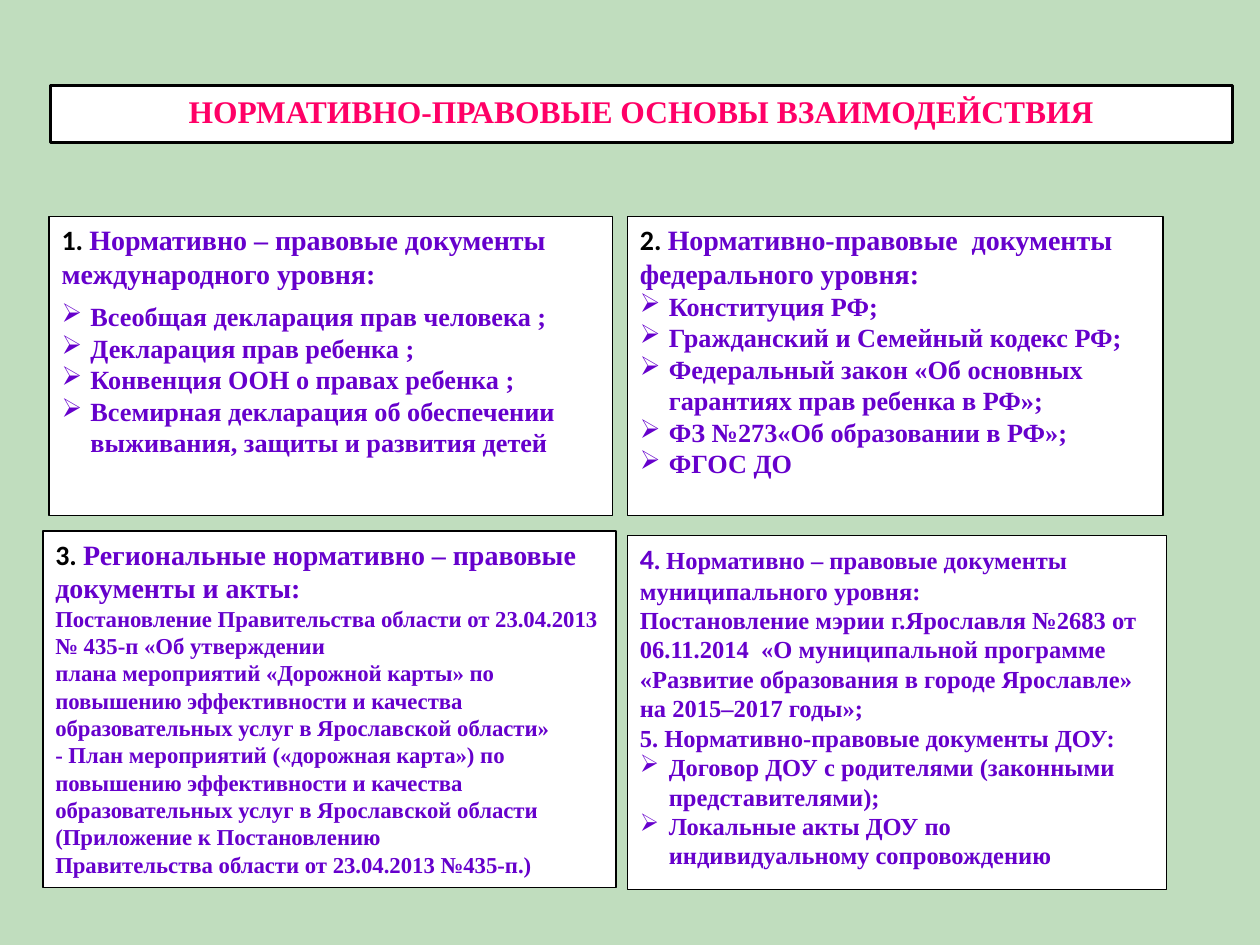
from lxml import etree
from pptx import Presentation
from pptx import util as u
from pptx.dml.color import RGBColor
from pptx.enum import shapes, text
from pptx.oxml.ns import qn

THEME = {
    "back": RGBColor.from_string("C0DDBE"),
    "panel": RGBColor.from_string("FFFFFF"),
    "ink": RGBColor.from_string("000000"),
    "title": RGBColor.from_string("FF0066"),
    "body": RGBColor.from_string("6600CC"),
    "serif": "Times New Roman",
    "sans": "Calibri",
    "title_size": 18,
    "heading_size": 16,
}
BULLET_INDENT = u.Inches(0.23)

deck = Presentation()
deck.slide_width, deck.slide_height = u.Inches(10), u.Inches(7.5)
slide = deck.slides.add_slide(deck.slide_layouts[6])
slide.background.fill.solid()
slide.background.fill.fore_color.rgb = THEME["back"]


def add_panel(left, top, width, height, border):
    """Bordered white box; lengths are percentages of the slide's size."""
    across, down = deck.slide_width / 100, deck.slide_height / 100
    panel = slide.shapes.add_shape(
        shapes.MSO_SHAPE.RECTANGLE, round(left * across), round(top * down),
        round(width * across), round(height * down))
    panel.shadow.inherit = False
    panel.fill.solid()
    panel.fill.fore_color.rgb = THEME["panel"]
    panel.line.color.rgb = THEME["ink"]
    panel.line.width = u.Pt(border)
    panel.text_frame.word_wrap = True
    panel.text_frame.vertical_anchor = text.MSO_ANCHOR.TOP
    return panel.text_frame


def set_font(font, size, color, face=THEME["serif"]):
    font.size, font.bold, font.name = u.Pt(size), True, face
    font.color.rgb = color


# Title bar
title = add_panel(4, 9.07, 93.8, 6, 1.5).paragraphs[0]
title.text = "НОРМАТИВНО-ПРАВОВЫЕ ОСНОВЫ ВЗАИМОДЕЙСТВИЯ"
title.alignment = text.PP_ALIGN.CENTER
title.space_before = title.space_after = u.Pt(3)
set_font(title.font, THEME["title_size"], THEME["title"])

# Four levels of documents; lines starting with the arrow become bullets
levels = [
    {"place": (3.9, 22.93, 44.7, 31.6), "number": "1. ", "number_color": THEME["ink"],
     "heading": "Нормативно – правовые документы международного уровня:",
     "heading_size": THEME["heading_size"], "size": 15, "gap": 6,
     "lines": ["➢Всеобщая декларация прав человека ;",
               "➢Декларация прав ребенка ;",
               "➢Конвенция ООН о правах ребенка ;",
               "➢Всемирная декларация об обеспечении выживания, защиты и развития детей"]},
    {"place": (49.8, 22.93, 42.5, 31.6), "number": "2. ", "number_color": THEME["ink"],
     "heading": "Нормативно-правовые  документы федерального уровня:",
     "heading_size": THEME["heading_size"], "size": 15, "gap": 0,
     "lines": ["➢Конституция РФ;",
               "➢Гражданский и Семейный кодекс РФ;",
               "➢Федеральный закон «Об основных гарантиях прав ребенка в РФ»;",
               "➢ФЗ №273«Об образовании в РФ»;",
               "➢ФГОС ДО"]},
    {"place": (3.4, 56.2, 45.5, 37.73), "number": "3. ", "number_color": THEME["ink"],
     "heading": "Региональные нормативно – правовые документы и акты:",
     "heading_size": THEME["heading_size"], "size": 13, "gap": 0,
     "lines": ["Постановление Правительства области от 23.04.2013 № 435-п «Об утверждении",
               "плана мероприятий «Дорожной карты» по повышению эффективности и качества "
               "образовательных услуг в Ярославской области»",
               "- План мероприятий («дорожная карта») по повышению эффективности и качества "
               "образовательных услуг в Ярославской области (Приложение к Постановлению",
               "Правительства области от 23.04.2013 №435-п.)"]},
    {"place": (49.8, 56.7, 42.8, 37.4), "number": "4", "number_color": THEME["body"],
     "heading": ". Нормативно – правовые документы муниципального уровня:",
     "heading_size": 14, "size": 14, "gap": 0,
     "lines": ["Постановление мэрии г.Ярославля №2683 от 06.11.2014  «О муниципальной программе "
               "«Развитие образования в городе Ярославле» на 2015–2017 годы»;",
               "5. Нормативно-правовые документы ДОУ:",
               "➢Договор ДОУ с родителями (законными представителями);",
               "➢Локальные акты ДОУ по индивидуальному сопровождению"]},
]

for level in levels:
    frame = add_panel(*level["place"], 0.75)

    # Numbered heading
    heading = frame.paragraphs[0]
    heading.alignment = text.PP_ALIGN.LEFT
    number, name = heading.add_run(), heading.add_run()
    number.text, name.text = level["number"], level["heading"]
    set_font(number.font, THEME["heading_size"], level["number_color"], THEME["sans"])
    set_font(name.font, level["heading_size"], THEME["body"])

    # Documents of this level
    for index, line in enumerate(level["lines"]):
        document = frame.add_paragraph()
        document.text = line.removeprefix("➢")
        document.alignment = text.PP_ALIGN.LEFT
        if index == 0 and level["gap"]:
            document.space_before = u.Pt(level["gap"])
        if line.startswith("➢"):
            properties = document._p.get_or_add_pPr()
            properties.set("marL", str(BULLET_INDENT))
            properties.set("indent", str(-BULLET_INDENT))
            etree.SubElement(properties, qn("a:buChar"), char="➢")
        set_font(document.font, level["size"], THEME["body"])

deck.save("out.pptx")
